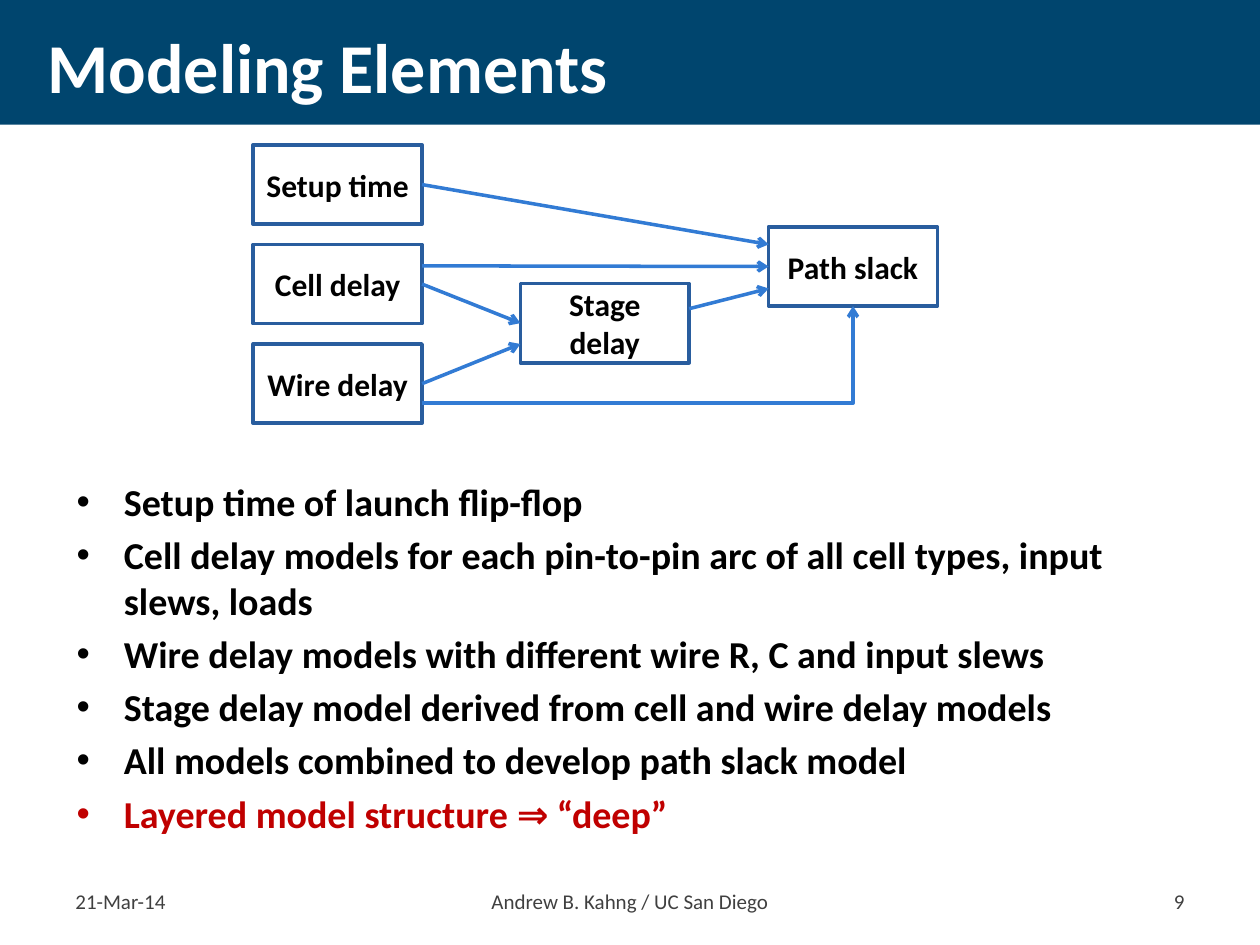
from lxml import etree
from pptx import Presentation, util as u
from pptx.dml.color import RGBColor
from pptx.enum import shapes, text
from pptx.oxml.ns import qn

theme = dict(font="Calibri", band="00456E", white="FFFFFF", black="000000",
             accent="C00000", muted="404040", border="295D9E", arrow="327BD4",
             title=40, body=21.7, box=18, footer=12, stroke=2)

deck = Presentation()
deck.slide_width, deck.slide_height = u.Inches(10), u.Inches(7.5)
COLUMN, ROW = deck.slide_width / 100, deck.slide_height / 75
slide = deck.slides.add_slide(deck.slide_layouts[6])


def grid(column, row, columns, rows):
    return [round(n * unit) for n, unit in
            zip((column, row, columns, rows), (COLUMN, ROW, COLUMN, ROW))]


def write(frame, lines, size, color="black", bold=True, align="LEFT",
          anchor="MIDDLE", bullet=False):
    frame.word_wrap = True
    frame.vertical_anchor = getattr(text.MSO_ANCHOR, anchor)
    for i, line in enumerate(lines):
        paragraph = frame.add_paragraph() if i else frame.paragraphs[0]
        paragraph.alignment = getattr(text.PP_ALIGN, align)
        run = paragraph.add_run()
        run.text = line
        run.font.name = theme["font"]
        run.font.size = u.Pt(theme[size])
        run.font.bold = bold
        last_color = "accent" if bullet and i == len(lines) - 1 else color
        run.font.color.rgb = RGBColor.from_string(theme[last_color])
        if bullet:
            paragraph.space_before = u.Pt(theme[size] * 0.2)
            properties = paragraph._p.get_or_add_pPr()
            indent = round(3.75 * COLUMN)
            properties.set("marL", str(indent))
            properties.set("indent", str(-indent))
            etree.SubElement(properties, qn("a:buFont"), typeface="Arial")
            etree.SubElement(properties, qn("a:buChar"), char="•")


band = slide.shapes.add_shape(shapes.MSO_SHAPE.RECTANGLE, *grid(0, 0, 100, 9.9))
band.shadow.inherit = False
band.fill.solid()
band.fill.fore_color.rgb = RGBColor.from_string(theme["band"])
band.line.fill.background()

points = [
    "Setup time of launch flip-flop",
    "Cell delay models for each pin-to-pin arc of all cell types, input slews, loads",
    "Wire delay models with different wire R, C and input slews",
    "Stage delay model derived from cell and wire delay models",
    "All models combined to develop path slack model",
    "Layered model structure ⇒ “deep”",
]
footer = dict(size="footer", color="muted", bold=False)
for place, lines, style in [
    ((5.1, 37.5, 84.4, 29.8), points, dict(size="body", anchor="TOP", bullet=True)),
    ((2.8, 1, 94.5, 8.4), ["Modeling Elements"], dict(size="title", color="white")),
    ((5, 69.5, 11.9, 4), ["21-Mar-14"], footer),
    ((18.5, 69.5, 63, 4), ["Andrew B. Kahng / UC San Diego"], dict(footer, align="CENTER")),
    ((83.1, 69.5, 11.9, 4), ["9"], dict(footer, align="RIGHT")),
]:
    write(slide.shapes.add_textbox(*grid(*place)).text_frame, lines, **style)

BOX_WIDTH, BOX_HEIGHT = 13.4, 6.3
INPUT, STAGE, SLACK = 20.1, 41.3, 61
INPUT_RIGHT, STAGE_RIGHT = INPUT + BOX_WIDTH, STAGE + BOX_WIDTH
models = {}
for name, column, row in [
    ("Setup time", INPUT, 11.5),
    ("Cell delay", INPUT, 19.4),
    ("Wire delay", INPUT, 27.3),
    ("Stage delay", STAGE, 22.5),
    ("Path slack", SLACK, 18),
]:
    model = slide.shapes.add_shape(shapes.MSO_SHAPE.RECTANGLE,
                                   *grid(column, row, BOX_WIDTH, BOX_HEIGHT))
    model.shadow.inherit = False
    model.fill.background()
    model.line.color.rgb = RGBColor.from_string(theme["border"])
    model.line.width = u.Pt(theme["stroke"])
    write(model.text_frame, [name], size="box", align="CENTER")
    models[name] = model

STRAIGHT, ELBOW = shapes.MSO_CONNECTOR.STRAIGHT, shapes.MSO_CONNECTOR.ELBOW
for kind, start, end, source, target in [
    (STRAIGHT, (INPUT_RIGHT, 14.65), (SLACK, 19.4), ("Setup time", 3), None),
    (STRAIGHT, (INPUT_RIGHT, 21.1), (SLACK, 21.15), None, ("Path slack", 1)),
    (STRAIGHT, (INPUT_RIGHT, 22.55), (STAGE, 25.65), ("Cell delay", 3), ("Stage delay", 1)),
    (STRAIGHT, (INPUT_RIGHT, 30.45), (STAGE, 27.3), ("Wire delay", 3), None),
    (STRAIGHT, (STAGE_RIGHT, 24.5), (SLACK, 22.9), None, None),
    (ELBOW, (INPUT_RIGHT, 32), (SLACK + BOX_WIDTH / 2, 24.3), None, ("Path slack", 2)),
]:
    arrow = slide.shapes.add_connector(kind, *grid(*start, *end))
    if source:
        arrow.begin_connect(models[source[0]], source[1])
    if target:
        arrow.end_connect(models[target[0]], target[1])
    arrow.line.color.rgb = RGBColor.from_string(theme["arrow"])
    arrow.line.width = u.Pt(theme["stroke"])
    properties = arrow._element.spPr
    if kind == ELBOW:
        properties.find(qn("a:prstGeom")).set("prst", "bentConnector2")
    etree.SubElement(properties.find(qn("a:ln")), qn("a:tailEnd"), type="arrow")
    etree.SubElement(properties, qn("a:effectLst"))

deck.save("out.pptx")
